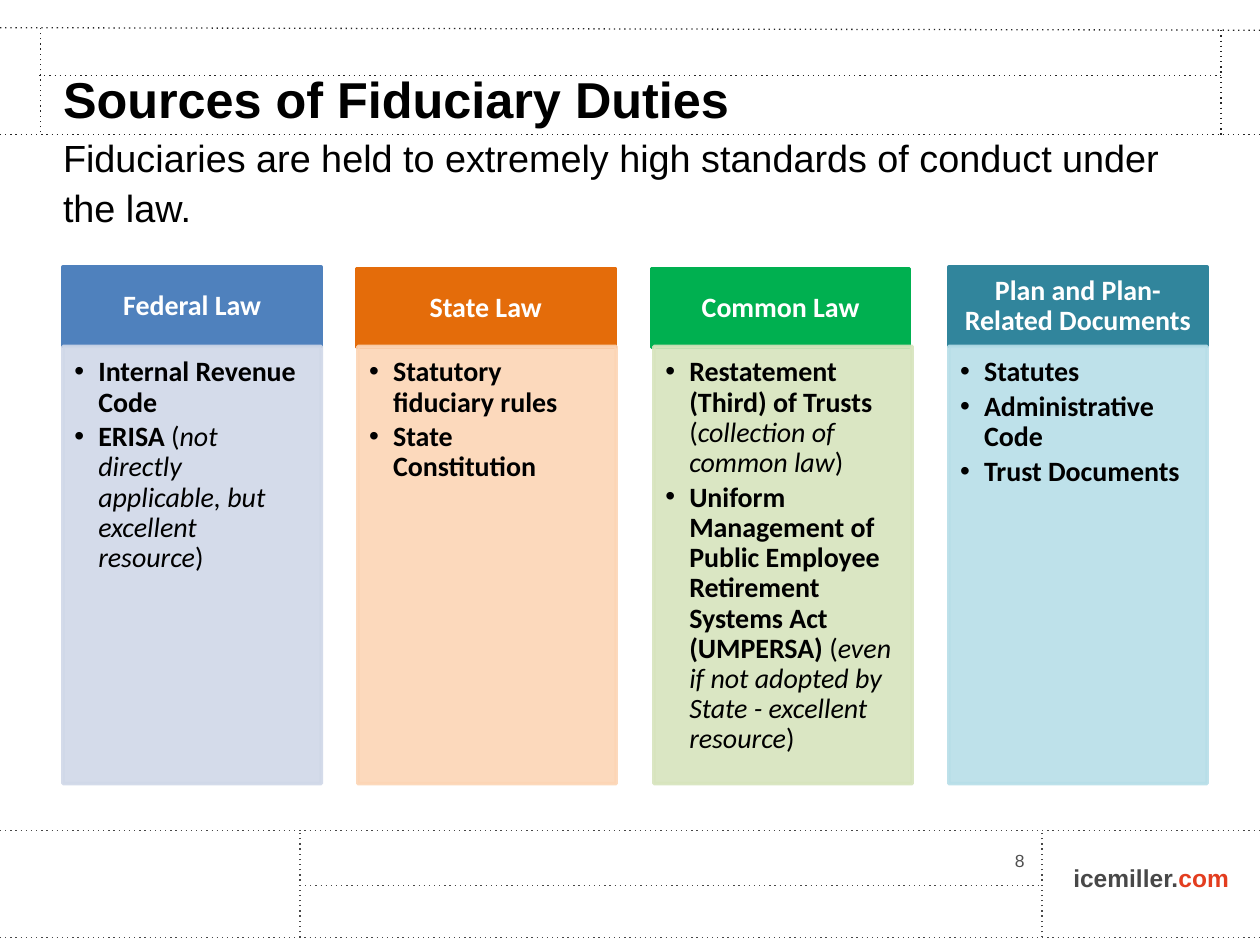
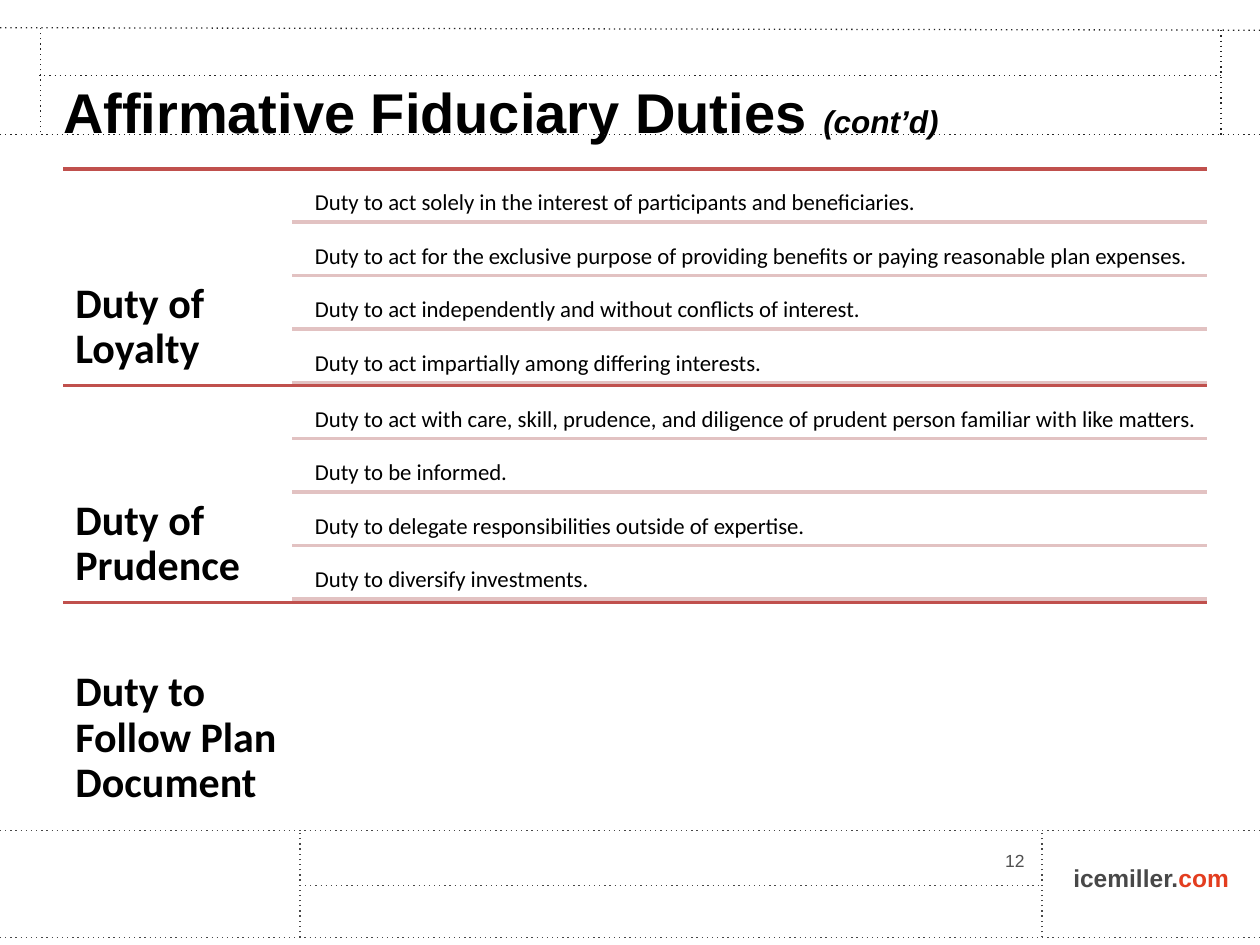
from lxml.etree import SubElement
from pptx import Presentation
from pptx.dml.color import RGBColor
from pptx.enum.dml import MSO_LINE
from pptx.enum.shapes import MSO_CONNECTOR, MSO_SHAPE
from pptx.enum.text import MSO_ANCHOR, MSO_AUTO_SIZE, PP_ALIGN
from pptx.oxml.ns import qn
from pptx.util import Inches, Pt

COLORS = {
    "black": "000000", "white": "FFFFFF", "footer": "484848", "grid": "262626",
    "number": "505050", "accent": "E33D1F", "section": "C0504D", "duty": "E2C2C2",
    "federal": "4F81BD", "federal pale": "D0D8E8",
    "state": "E46C0A", "state pale": "FCD5B5",
    "common": "00B050", "common pale": "D7E4BD",
    "plan": "31859C", "plan pale": "B7DEE8",
}
BOLD, PLAIN, ITALIC = {"bold": True}, {"bold": False}, {"bold": False, "italic": True}


def write(shape, paragraphs, size=16, font="Calibri", color="black", bold=False,
          anchor=MSO_ANCHOR.TOP, align=PP_ALIGN.LEFT, insets=(0.1, 0.05, 0.1, 0.05),
          spacing=None, after=0, bullet=False, wrap=True):
    """Fill a shape; each paragraph is a list of (text, style changes) runs."""
    frame = shape.text_frame
    frame.auto_size = MSO_AUTO_SIZE.NONE
    frame.word_wrap = wrap
    frame.vertical_anchor = anchor
    (frame.margin_left, frame.margin_top,
     frame.margin_right, frame.margin_bottom) = map(Inches, insets)
    for number, runs in enumerate(paragraphs):
        paragraph = frame.add_paragraph() if number else frame.paragraphs[0]
        if bullet:
            properties = paragraph._p.get_or_add_pPr()
            properties.set("marL", str(Inches(0.19)))
            properties.set("indent", str(Inches(-0.19)))
            SubElement(properties, qn("a:buFont"), typeface="Arial")
            SubElement(properties, qn("a:buChar"), char="•")
        paragraph.alignment = align
        paragraph.space_before = Pt(0)
        paragraph.space_after = Pt(after)
        if spacing:
            paragraph.line_spacing = spacing
        for text, style in runs:
            run = paragraph.add_run()
            run.text = text
            run.font.name = font
            run.font.size = Pt(style.get("size", size))
            run.font.bold = style.get("bold", bold)
            run.font.italic = style.get("italic", False)
            run.font.color.rgb = RGBColor.from_string(COLORS[style.get("color", color)])


def rule(slide, x1, y1, x2, y2, color, width=2.0, dotted=False):
    connector = slide.shapes.add_connector(MSO_CONNECTOR.STRAIGHT, *map(Inches, (x1, y1, x2, y2)))
    connector.line.color.rgb = RGBColor.from_string(COLORS[color])
    connector.line.width = Pt(width)
    properties = connector._element.spPr
    if dotted:
        connector.line.dash_style = MSO_LINE.ROUND_DOT
        next(properties.iter(qn("a:prstDash"))).set("val", "dot")
    SubElement(properties, qn("a:effectLst"))


deck = Presentation()
deck.slide_width, deck.slide_height = Inches(10), Inches(7.5)

# Shared frame: dotted grid, web address, slide number
GRID = [
    (0, 6.59, 10, 6.59, "footer"), (0, 7.44, 10, 7.44, "footer"),
    (8.27, 7.44, 8.27, 6.59, "footer"), (2.38, 7.03, 8.27, 7.03, "footer"),
    (2.38, 7.44, 2.38, 6.59, "footer"),
    (0.32, 1.05, 0.32, 0.22, "grid"), (9.69, 0.24, 9.69, 1.07, "grid"),
    (0, 1.07, 10, 1.07, "grid"), (0, 0.22, 10, 0.24, "grid"),
    (0.31, 0.6, 9.69, 0.6, "grid"),
]
# Number, title top, title height, line pitch, title paragraphs
TITLES = [
    ("8", 0.62, 1.21, 29, [
        [("Sources of Fiduciary Duties", {"size": 28.8, "bold": True})],
        [("Fiduciaries are held to extremely high standards of conduct under the law.",
          {"size": 21.6})]]),
    ("12", 0.25, 0.9, 34, [
        [("Affirmative Fiduciary Duties ", {"size": 32, "bold": True}),
         ("(cont’d)", {"size": 18, "bold": True, "italic": True})]]),
]
slides = []
for number, top, height, pitch, heading in TITLES:
    slide = deck.slides.add_slide(deck.slide_layouts[5])
    slides.append(slide)
    for x1, y1, x2, y2, color in GRID:
        rule(slide, x1, y1, x2, y2, color, width=0.75, dotted=True)
    address = slide.shapes.add_textbox(Inches(8.42), Inches(6.8), Inches(1.46), Inches(0.34))
    write(address, [[("icemiller.", {}), ("com", {"color": "accent"})]],
          size=14, font="Arial", color="footer", bold=True, wrap=False)
    page = slide.shapes.add_textbox(Inches(5.92), Inches(6.63), Inches(2.31), Inches(0.4))
    write(page, [[(number, {})]], size=10, font="Arial", color="number",
          anchor=MSO_ANCHOR.MIDDLE, align=PP_ALIGN.RIGHT)
    title = slide.shapes.title
    title.left, title.top = Inches(0.5), Inches(top)
    title.width, title.height = Inches(9), Inches(height)
    write(title, heading, font="Arial", anchor=MSO_ANCHOR.BOTTOM,
          insets=(0, 0, 0, 0), spacing=Pt(pitch))

sources_slide, duties_slide = slides

# Sources of law: a header and a bulleted panel per column
SOURCES = [
    ("Federal Law", "federal", 0.5, 2.12, 0.5, [
        [("Internal Revenue Code", BOLD)],
        [("ERISA ", BOLD), ("(", PLAIN),
         ("not directly applicable, but excellent resource", ITALIC), (")", PLAIN)]]),
    ("State Law", "state", 2.83, 2.13, 2.84, [
        [("Statutory fiduciary rules", BOLD)],
        [("State Constitution", BOLD)]]),
    ("Common Law", "common", 5.17, 2.13, 5.19, [
        [("Restatement (Third) of Trusts ", BOLD), ("(", PLAIN),
         ("collection of common law", ITALIC), (")", PLAIN)],
        [("Uniform Management of Public Employee Retirement Systems Act (UMPERSA)", BOLD),
         (" (", PLAIN), ("even if not adopted by State - excellent resource", ITALIC),
         (")", PLAIN)]]),
    ("Plan and Plan-Related Documents", "plan", 7.53, 2.12, 7.53, [
        [("Statutes", BOLD)],
        [("Administrative Code", BOLD)],
        [("Trust Documents", BOLD)]]),
]
for law, color, header_left, header_top, panel_left, points in SOURCES:
    header = sources_slide.shapes.add_shape(
        MSO_SHAPE.RECTANGLE, Inches(header_left), Inches(header_top), Inches(2.05), Inches(0.63))
    panel = sources_slide.shapes.add_shape(
        MSO_SHAPE.RECTANGLE, Inches(panel_left), Inches(2.75), Inches(2.05), Inches(3.47))
    for box, shade in ((header, color), (panel, color + " pale")):
        box.shadow.inherit = False
        box.fill.solid()
        box.fill.fore_color.rgb = RGBColor.from_string(COLORS[shade])
        box.line.color.rgb = RGBColor.from_string(COLORS[shade])
        box.line.width = Pt(2)
    for tint in panel._element.spPr.iter(qn("a:srgbClr")):
        SubElement(tint, qn("a:alpha"), val="90000")
    write(header, [[(law, {})]], color="white", bold=True, anchor=MSO_ANCHOR.MIDDLE,
          align=PP_ALIGN.CENTER, insets=(0.12, 0.07, 0.12, 0.07), spacing=0.9)
    write(panel, points, insets=(0.09, 0.09, 0.12, 0.14), spacing=0.9, after=2.5, bullet=True)

# Duties: sections of equal height, each with up to four ruled lines
DUTIES = [
    ("Duty of Loyalty", [
        "Duty to act solely in the interest of participants and beneficiaries.",
        "Duty to act for the exclusive purpose of providing benefits or paying reasonable plan expenses.",
        "Duty to act independently and without conflicts of interest.",
        "Duty to act impartially among differing interests."]),
    ("Duty of Prudence", [
        "Duty to act with care, skill, prudence, and diligence of prudent person familiar with like matters.",
        "Duty to be informed.",
        "Duty to delegate responsibilities outside of expertise.",
        "Duty to diversify investments."]),
    ("Duty to Follow Plan Document", []),
]
SECTION_HEIGHT = 1.72
DUTY_PITCH = 1.7 / 4
for section, (name, duties) in enumerate(DUTIES):
    section_top = 1.34 + section * SECTION_HEIGHT
    rule(duties_slide, 0.5, section_top, 9.58, section_top, "section")
    label = duties_slide.shapes.add_textbox(
        Inches(0.5), Inches(section_top), Inches(1.82), Inches(SECTION_HEIGHT))
    write(label, [[(name, {})]], size=24, bold=True, anchor=MSO_ANCHOR.BOTTOM,
          insets=(0.1, 0.1, 0.1, 0.1), spacing=0.9)
    for row, duty in enumerate(duties):
        duty_top = section_top + 0.02 + row * DUTY_PITCH
        line = duties_slide.shapes.add_textbox(
            Inches(2.45), Inches(duty_top), Inches(7.13), Inches(0.4))
        write(line, [[(duty, {})]], size=13, anchor=MSO_ANCHOR.BOTTOM,
              insets=(0.05, 0.05, 0.05, 0.05), spacing=0.9)
        rule(duties_slide, 2.32, duty_top + 0.4, 9.58, duty_top + 0.4, "duty")

deck.save("out.pptx")
